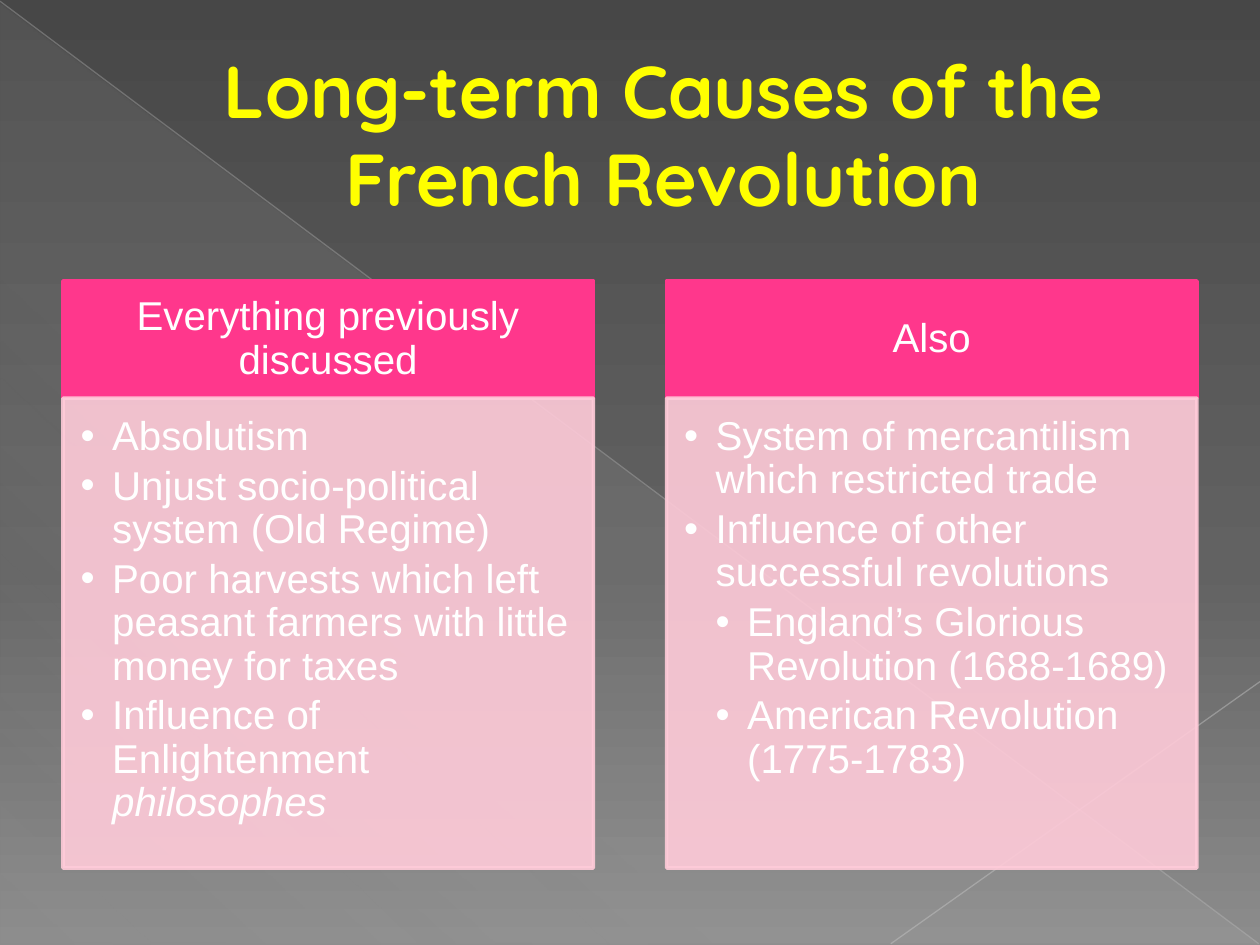
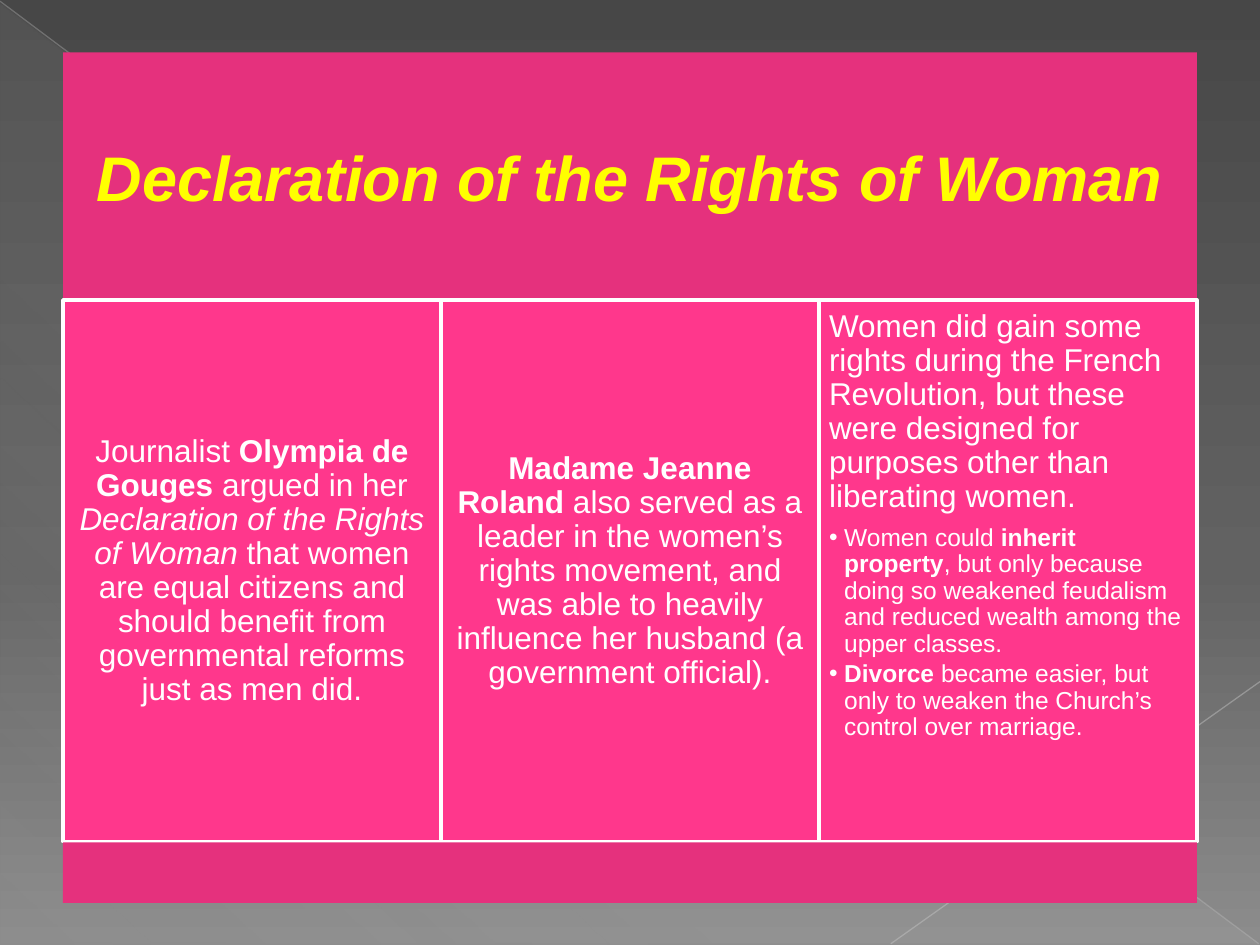
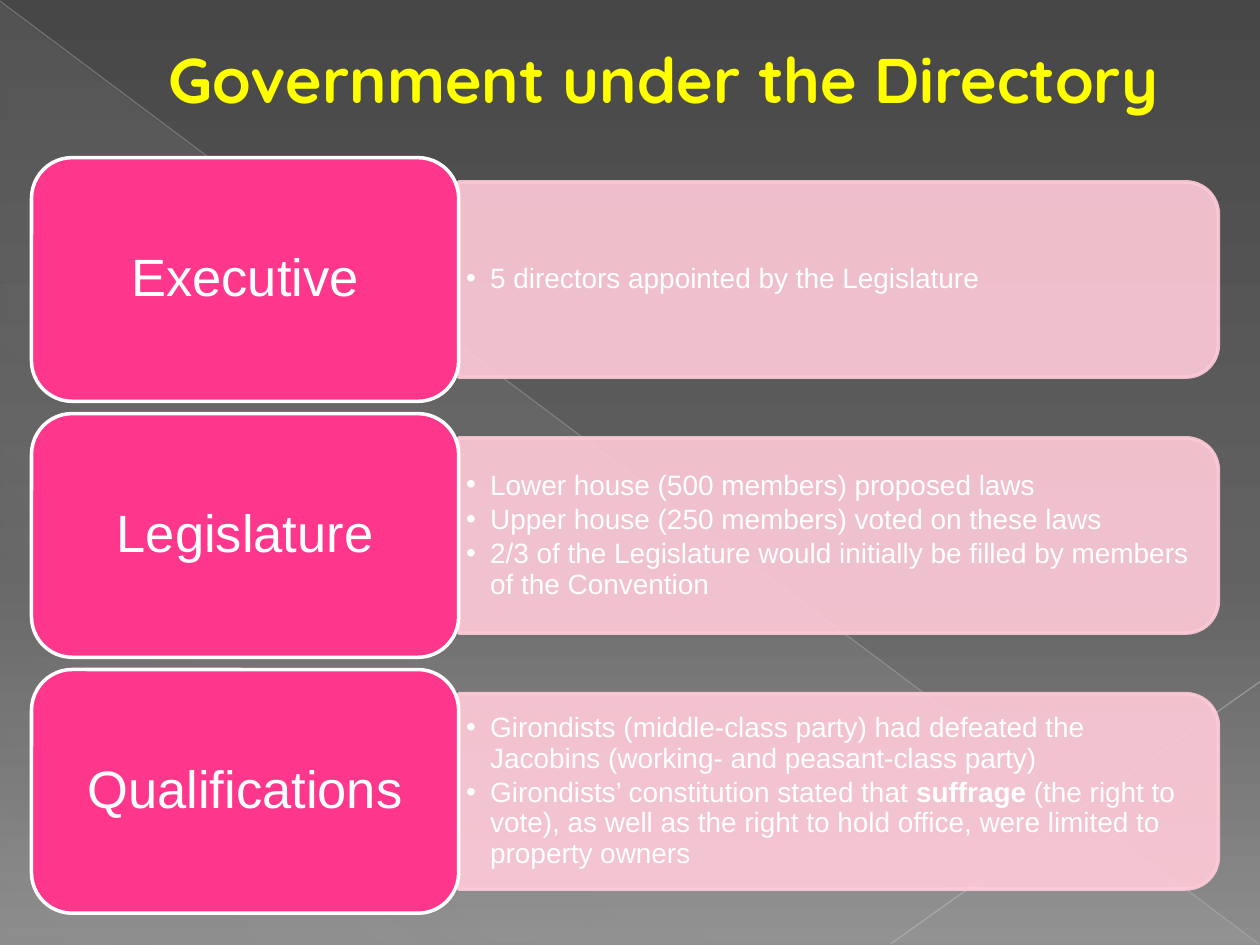
from dataclasses import dataclass

from lxml.etree import SubElement
from pptx import Presentation
from pptx.dml.color import RGBColor
from pptx.enum.shapes import MSO_CONNECTOR, MSO_SHAPE
from pptx.enum.text import MSO_ANCHOR, MSO_AUTO_SIZE, PP_ALIGN
from pptx.oxml.ns import qn
from pptx.util import Inches, Pt

SLIDE_WIDTH, SLIDE_HEIGHT = Inches(10), Inches(7.5)
# The layout grid has 100 columns and 100 rows
COLUMN, ROW = SLIDE_WIDTH / 100, SLIDE_HEIGHT / 100

COLORS = {
    "top": "474747", "middle": "626262", "bottom": "8C8C8C",
    "facet": "D2D2D2", "long_ray": "BEBEBE", "short_ray": "C5C5C5",
    "pink": "FF378C", "pale": "FFCBD9", "band": "E5317D",
    "title": "FFFF00", "white": "FFFFFF",
}
BODY_FONT, TITLE_FONT = "Arial", "Quicksand"


@dataclass
class Box:
    """A region in grid columns and rows."""
    left: float
    top: float
    width: float
    height: float

    def inner(self, left, top, width, height):
        return Box(self.left + left, self.top + top, width, height)

    def emu(self):
        return (round(self.left * COLUMN), round(self.top * ROW),
                round(self.width * COLUMN), round(self.height * ROW))


@dataclass
class Line:
    """One paragraph; runs are strings or (string, style) with style b or i."""
    runs: list
    size: float
    depth: int = 0
    indent: float = 0
    before: float = 0
    centred: bool = False


def rgb(name):
    return RGBColor.from_string(COLORS[name])


def set_alpha(element, percent):
    for color in element.iter(qn("a:srgbClr")):
        SubElement(color, qn("a:alpha"), val=str(percent * 1000))


def set_gradient(fill, element, stops, angle):
    """Stops are (position, colour name, opacity) in percent."""
    fill.gradient()
    stop_list = element.find(".//" + qn("a:gsLst"))
    for stop in list(stop_list):
        stop_list.remove(stop)
    for position, name, opacity in stops:
        stop = SubElement(stop_list, qn("a:gs"), pos=str(position * 1000))
        color = SubElement(stop, qn("a:srgbClr"), val=COLORS[name])
        if opacity < 100:
            SubElement(color, qn("a:alpha"), val=str(opacity * 1000))
    element.find(".//" + qn("a:lin")).set("ang", str(angle * 60000))


def add_panel(slide, kind, box, fill, line=None, alpha=100):
    shape = slide.shapes.add_shape(kind, *box.emu())
    shape.shadow.inherit = False
    shape.fill.solid()
    shape.fill.fore_color.rgb = rgb(fill)
    if line:
        shape.line.color.rgb = rgb(line)
        shape.line.width = Pt(2)
    else:
        shape.line.fill.background()
    if alpha < 100:
        set_alpha(shape.element, alpha)
    return shape


def add_run(paragraph, text, size, color="white", font=BODY_FONT, style=""):
    run = paragraph.add_run()
    run.text = text
    run.font.name = font
    run.font.size = Pt(size)
    run.font.color.rgb = rgb(color)
    run.font.bold = "b" in style
    run.font.italic = "i" in style


def set_frame(frame, insets, anchor):
    frame.word_wrap = True
    frame.auto_size = MSO_AUTO_SIZE.NONE
    frame.vertical_anchor = anchor
    (frame.margin_left, frame.margin_top,
     frame.margin_right, frame.margin_bottom) = map(Inches, insets)


def write(shape, lines, insets, anchor=MSO_ANCHOR.MIDDLE):
    frame = shape.text_frame
    set_frame(frame, insets, anchor)
    for index, line in enumerate(lines):
        paragraph = frame.add_paragraph() if index else frame.paragraphs[0]
        paragraph.alignment = PP_ALIGN.CENTER if line.centred else PP_ALIGN.LEFT
        paragraph.line_spacing = 0.9
        paragraph.space_before = Pt(line.before)
        paragraph.level = line.depth
        if line.depth:
            properties = paragraph._p.get_or_add_pPr()
            properties.set("marL", str(Inches(line.indent * line.depth)))
            properties.set("indent", str(-Inches(line.indent)))
            SubElement(properties, qn("a:buFont"), typeface=BODY_FONT)
            SubElement(properties, qn("a:buChar"), char="•")
        for run in line.runs:
            text, style = (run, "") if isinstance(run, str) else run
            add_run(paragraph, text, line.size, style=style)


def bullets(items, size, indent, before):
    """Items are (depth, runs); the first has no space above it."""
    return [Line(runs, size, depth, indent, before if index else 0)
            for index, (depth, runs) in enumerate(items)]


def set_title(slide, box, text, size, font=TITLE_FONT, style="b",
              indent=0.53, insets=(0.1, 0.05, 0.1, 0.05), spacing=1.0):
    title = slide.shapes.title
    title.left, title.top, title.width, title.height = box.emu()
    set_frame(title.text_frame, insets, MSO_ANCHOR.MIDDLE)
    paragraph = title.text_frame.paragraphs[0]
    paragraph.alignment = PP_ALIGN.CENTER
    paragraph.line_spacing = spacing
    paragraph._p.get_or_add_pPr().set("marL", str(Inches(indent)))
    add_run(paragraph, text, size, "title", font, style)
    return title


# Shared backdrop, kept on the slide master
def add_ray(slide, start, end, color, alpha):
    points = [round(value) for column, row in (start, end)
              for value in (column * COLUMN, row * ROW)]
    ray = slide.shapes.add_connector(MSO_CONNECTOR.STRAIGHT, *points)
    ray.line.color.rgb = rgb(color)
    ray.line.width = Pt(0.75)
    set_alpha(ray.element, alpha)
    SubElement(ray.element.spPr, qn("a:effectLst"))
    return ray


def build_backdrop(master, slide):
    set_gradient(master.background.fill, master.element,
                 [(0, "top", 100), (60, "middle", 100), (100, "bottom", 100)], 90)
    facet = add_panel(slide, MSO_SHAPE.RIGHT_TRIANGLE,
                      Box(0, 0.27, 100, 99.73), "facet")
    set_gradient(facet.fill, facet.element,
                 [(0, "facet", 10), (70, "facet", 8), (100, "facet", 1)], 133)
    parts = [facet,
             add_ray(slide, (0, 0.13), (99.9, 99.87), "long_ray", 35),
             add_ray(slide, (100, 72.13), (70.7, 99.87), "short_ray", 45)]
    # Behind the master's placeholders, with ids that they do not use
    for index, part in enumerate(parts):
        part.element.find(".//" + qn("p:cNvPr")).set("id", str(101 + index))
        master.shapes.element.insert(2 + index, part.element)


# Slide 1: headed lists side by side
def build_causes(slide, box):
    set_title(slide, Box(5, 3.87, 90, 20.4),
              "Long-term Causes of the French Revolution", 42)
    lists = [
        ("Everything previously discussed", [
            (1, ["Absolutism"]),
            (1, ["Unjust socio-political system (Old Regime)"]),
            (1, ["Poor harvests which left peasant farmers with little money for taxes"]),
            (1, ["Influence of Enlightenment ", ("philosophes", "i")]),
        ]),
        ("Also", [
            (1, ["System of mercantilism which restricted trade"]),
            (1, ["Influence of other successful revolutions"]),
            (2, ["England’s Glorious Revolution (1688-1689)"]),
            (2, ["American Revolution (1775-1783)"]),
        ]),
    ]
    width, header_height = 42.1, 12.4
    step = (box.width - width) / (len(lists) - 1)
    for index, (heading, items) in enumerate(lists):
        header = add_panel(slide, MSO_SHAPE.RECTANGLE,
                           box.inner(index * step, 0, width, header_height),
                           "pink", "pink")
        write(header, [Line([heading], 23, centred=True)], (0.18, 0.1, 0.18, 0.1))
        body = add_panel(slide, MSO_SHAPE.RECTANGLE,
                         box.inner(index * step, header_height, width,
                                   box.height - header_height),
                         "pale", "pale", 90)
        write(body, bullets(items, 23, 0.25, 3.5),
              (0.14, 0.14, 0.17, 0.2), MSO_ANCHOR.TOP)


# Slide 2: title band, three cells and a closing band
def build_declaration(slide, box):
    title = set_title(slide, box.inner(0, 0, box.width, 27.33),
                      "Declaration of the Rights of Woman", 36, BODY_FONT, "bi",
                      0, (0.15,) * 4, 0.9)
    title.fill.solid()
    title.fill.fore_color.rgb = rgb("band")
    cells = [
        [Line(["Journalist ", ("Olympia de Gouges", "b"), " argued in her ",
               ("Declaration of the Rights of Woman", "i"),
               " that women are equal citizens and should benefit from "
               "governmental reforms just as men did."], 18, centred=True)],
        [Line([("Madame Jeanne Roland", "b"),
               " also served as a leader in the women’s rights movement, and was "
               "able to heavily influence her husband (a government official)."],
              18, centred=True)],
        [Line(["Women did gain some rights during the French Revolution, but these "
               "were designed for purposes other than liberating women."], 18),
         Line(["Women could ", ("inherit property", "b"),
               ", but only because doing so weakened feudalism and reduced wealth "
               "among the upper classes."], 14, 1, 0.12, 6.3),
         Line([("Divorce", "b"), " became easier, but only to weaken the Church’s "
               "control over marriage."], 14, 1, 0.12, 2.1)],
    ]
    width = box.width / len(cells)
    for index, lines in enumerate(cells):
        cell = add_panel(slide, MSO_SHAPE.RECTANGLE,
                         box.inner(index * width, 26.2, width, 57.33),
                         "pink", "white")
        anchor = MSO_ANCHOR.MIDDLE if lines[0].centred else MSO_ANCHOR.TOP
        write(cell, lines, (0.08,) * 4, anchor)
    add_panel(slide, MSO_SHAPE.RECTANGLE,
              box.inner(0, box.height - 6.4, box.width, 6.4), "band")


# Slide 3: labelled rows
def add_branch(slide, box, label, items):
    tag_width, panel_height, text_height = 33.9, 20.67, 18.67
    panel_width = box.width - tag_width
    panel = box.inner(tag_width, (box.height - panel_height) / 2,
                      panel_width, panel_height)
    # The panel is upright before its quarter turn, so its sides swap
    tall_width = panel.height * ROW / COLUMN
    tall_height = panel.width * COLUMN / ROW
    upright = panel.inner((panel.width - tall_width) / 2,
                          (panel.height - tall_height) / 2,
                          tall_width, tall_height)
    backing = add_panel(slide, MSO_SHAPE.ROUND_2_SAME_RECTANGLE, upright,
                        "pale", "pale", 90)
    backing.rotation = 90
    text = slide.shapes.add_textbox(*panel.inner(
        0, (panel_height - text_height) / 2, panel_width - 0.8, text_height).emu())
    write(text, bullets(items, 16, 0.19, 2.4), (0.06, 0.03, 0.07, 0.03))
    tag = add_panel(slide, MSO_SHAPE.ROUNDED_RECTANGLE,
                    box.inner(0, 0, tag_width, box.height), "pink", "white")
    write(tag, [Line([label], 30, centred=True)], (0.12, 0.06, 0.12, 0.06))


def build_directory(slide, box):
    set_title(slide, Box(5, 0, 90, 16.67), "Government under the Directory", 36)
    branches = [
        ("Executive", [(1, ["5 directors appointed by the Legislature"])]),
        ("Legislature", [
            (1, ["Lower house (500 members) proposed laws"]),
            (1, ["Upper house (250 members) voted on these laws"]),
            (1, ["2/3 of the Legislature would initially be filled by members "
                 "of the Convention"]),
        ]),
        ("Qualifications", [
            (1, ["Girondists (middle-class party) had defeated the Jacobins "
                 "(working- and peasant-class party)"]),
            (1, ["Girondists’ constitution stated that ", ("suffrage", "b"),
                 " (the right to vote), as well as the right to hold office, "
                 "were limited to property owners"]),
        ]),
    ]
    gap = 1.3
    height = (box.height - gap * (len(branches) - 1)) / len(branches)
    for index, (label, items) in enumerate(branches):
        add_branch(slide, box.inner(0, index * (height + gap), box.width, height),
                   label, items)


def main():
    presentation = Presentation()
    presentation.slide_width, presentation.slide_height = SLIDE_WIDTH, SLIDE_HEIGHT
    title_only = presentation.slide_layouts[5]
    pages = [
        (build_causes, Box(5, 29.73, 90, 62.13)),
        (build_declaration, Box(5, 5.55, 90, 90)),
        (build_directory, Box(2.5, 16.69, 94.2, 79.95)),
    ]
    for index, (build, box) in enumerate(pages):
        slide = presentation.slides.add_slide(title_only)
        if index == 0:
            build_backdrop(presentation.slide_master, slide)
        build(slide, box)
    presentation.save("out.pptx")


if __name__ == "__main__":
    main()
